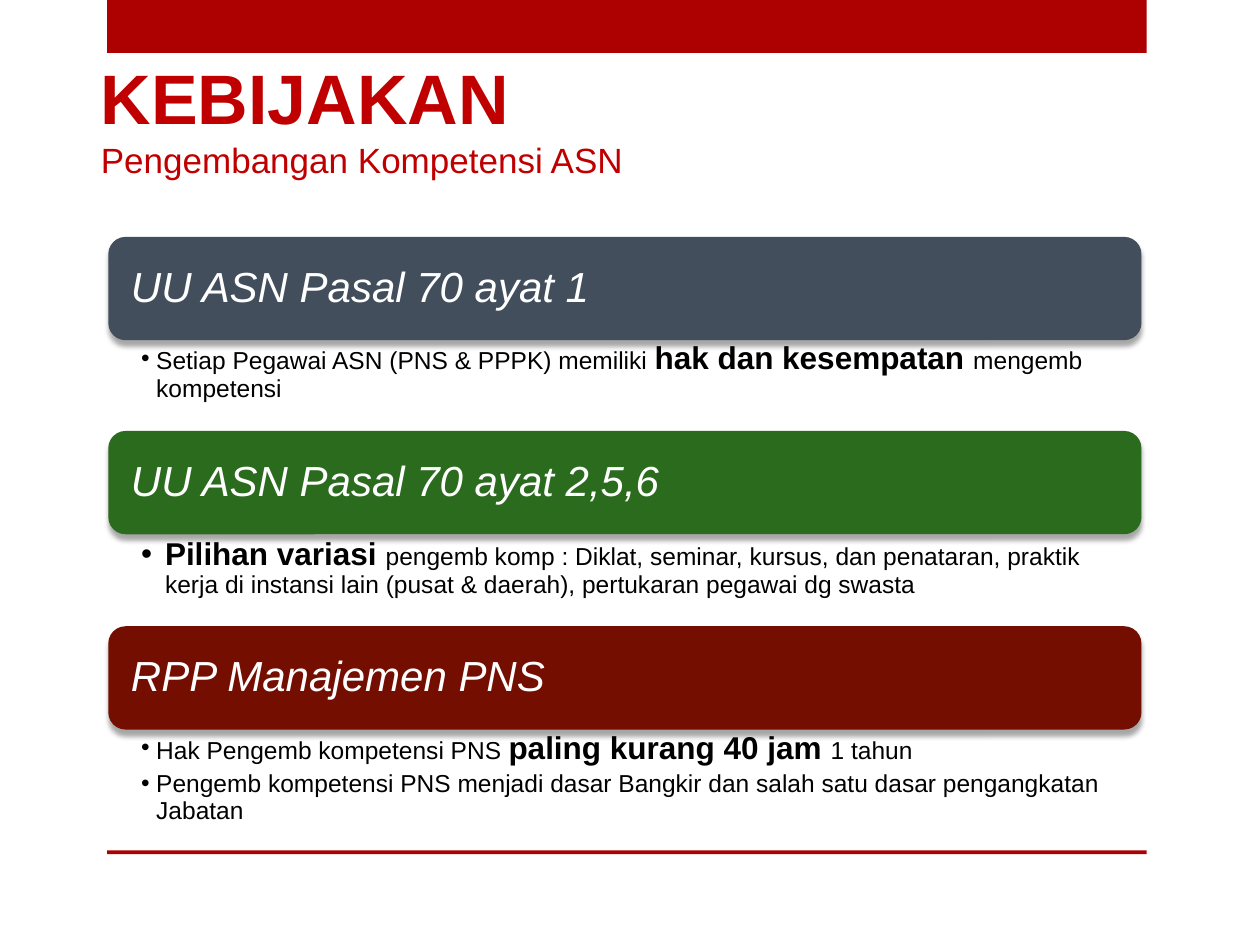
"""Build the competence development policy slide."""
from lxml.etree import SubElement
from pptx import Presentation
from pptx.dml.color import RGBColor
from pptx.enum.shapes import MSO_SHAPE
from pptx.enum.text import MSO_ANCHOR, MSO_AUTO_SIZE, PP_ALIGN
from pptx.oxml.ns import qn
from pptx.util import Inches, Pt

TITLE = [[("KEBIJAKAN \v", {"size": 40, "bold": True}),
          ("Pengembangan Kompetensi ASN", {"size": 20})]]
STRONG = {"size": 18, "bold": True}
SECTIONS = [
    {"head": "UU ASN Pasal 70 ayat 1", "fill": "424E5B", "height": 0.72,
     "indent": 0.12, "insets": (0.26, 0.02, 0.11, 0.02),
     "items": [[("Setiap Pegawai ASN (PNS & PPPK) memiliki ", {}),
                ("hak dan kesempatan ", STRONG),
                ("mengemb kompetensi", {})]]},
    {"head": "UU ASN Pasal 70 ayat 2,5,6", "fill": "2B6B1D", "height": 0.73,
     "indent": 0.19, "insets": (0.26, 0.03, 0.14, 0.03),
     "items": [[("Pilihan variasi ", STRONG),
                ("pengemb komp : Diklat, seminar, kursus, dan penataran, praktik kerja "
                 "di instansi lain (pusat & daerah), pertukaran pegawai dg swasta", {})]]},
    {"head": "RPP Manajemen PNS", "fill": "730E00", "height": 0.77,
     "indent": 0.12, "insets": (0.26, 0.02, 0.11, 0.02),
     "items": [[("Hak Pengemb kompetensi PNS ", {}),
                ("paling kurang 40 jam ", STRONG),
                ("1 tahun", {})],
               [("Pengemb kompetensi PNS menjadi dasar Bangkir dan salah satu "
                 "dasar pengangkatan Jabatan", {})]]},
]
THEME = {"font": "Arial", "bar": "AD0101", "title": "C00000", "head": "FFFFFF",
         "body": "000000", "head_size": 24, "body_size": 14}
BARS = [(0, 0.42), (6.75, 0.03)]
LEFT, TOP, WIDTH, HEAD_H = 0.86, 1.88, 8.2, 0.82


def write(sp, paragraphs, color, size=14, italic=False, anchor=MSO_ANCHOR.TOP,
          insets=(0.1, 0.05, 0.1, 0.05), spacing=1, after=0, indent=None):
    tf = sp.text_frame
    tf.word_wrap, tf.auto_size, tf.vertical_anchor = True, MSO_AUTO_SIZE.NONE, anchor
    tf.margin_left, tf.margin_top, tf.margin_right, tf.margin_bottom = map(Inches, insets)
    for i, runs in enumerate(paragraphs):
        p = tf.add_paragraph() if i else tf.paragraphs[0]
        p.alignment, p.line_spacing = PP_ALIGN.LEFT, spacing
        p.space_before, p.space_after = Pt(0), Pt(after)
        if indent:
            pPr = p._p.get_or_add_pPr()
            pPr.set("marL", str(Inches(indent)))
            pPr.set("indent", str(-Inches(indent)))
            SubElement(pPr, qn("a:buFont"), typeface=THEME["font"])
            SubElement(pPr, qn("a:buChar"), char="•")
        for text, style in runs:
            for j, part in enumerate(text.split("\v")):
                if j:
                    p.add_line_break()
                if part:
                    r = p.add_run()
                    r.text = part
                    r.font.name = THEME["font"]
                    r.font.size = Pt(style.get("size", size))
                    r.font.bold = style.get("bold", False)
                    r.font.italic = italic
                    r.font.color.rgb = RGBColor.from_string(color)


def place(sp, left, top, width, height):
    sp.left, sp.top, sp.width, sp.height = map(Inches, (left, top, width, height))


def add_block(s, kind, box, fill):
    sp = s.shapes.add_shape(kind, *map(Inches, box))
    sp.fill.solid()
    sp.fill.fore_color.rgb = RGBColor.from_string(fill)
    sp.line.fill.background()
    sp.shadow.inherit = False
    return sp


def add_shadow(sp):
    effects = sp._element.spPr.find(qn("a:effectLst"))
    shadow = SubElement(effects, qn("a:outerShdw"), blurRad=str(Pt(3)), dist=str(Pt(3)),
                        dir="5400000", rotWithShape="0")
    clr = SubElement(shadow, qn("a:srgbClr"), val="000000")
    SubElement(clr, qn("a:alpha"), val="35000")


def main():
    prs = Presentation()
    prs.slide_width, prs.slide_height = Inches(10), Inches(7.5)
    s = prs.slides.add_slide(prs.slide_layouts.get_by_name("Comparison"))
    for top, height in BARS:
        add_block(s, MSO_SHAPE.RECTANGLE, (0.85, top, 8.25, height), THEME["bar"])

    title, *bodies = [sp for sp in s.placeholders]
    place(title, 0.7, 0.31, 8.17, 1.25)
    write(title, TITLE, THEME["title"], anchor=MSO_ANCHOR.MIDDLE)

    top = TOP
    for section, body in zip(SECTIONS, bodies):
        head = add_block(s, MSO_SHAPE.ROUNDED_RECTANGLE, (LEFT, top, WIDTH, HEAD_H),
                         section["fill"])
        add_shadow(head)
        write(head, [[(section["head"], {})]], THEME["head"], THEME["head_size"],
              italic=True, anchor=MSO_ANCHOR.MIDDLE, insets=(0.14, 0.1, 0.14, 0.1),
              spacing=0.9)
        place(body, LEFT, top + HEAD_H, WIDTH, section["height"])
        write(body, section["items"], THEME["body"], THEME["body_size"],
              insets=section["insets"], spacing=0.9, after=3, indent=section["indent"])
        top += HEAD_H + section["height"]
    for spare in bodies[len(SECTIONS):]:
        spare._element.getparent().remove(spare._element)
    prs.save("out.pptx")


if __name__ == "__main__":
    main()
